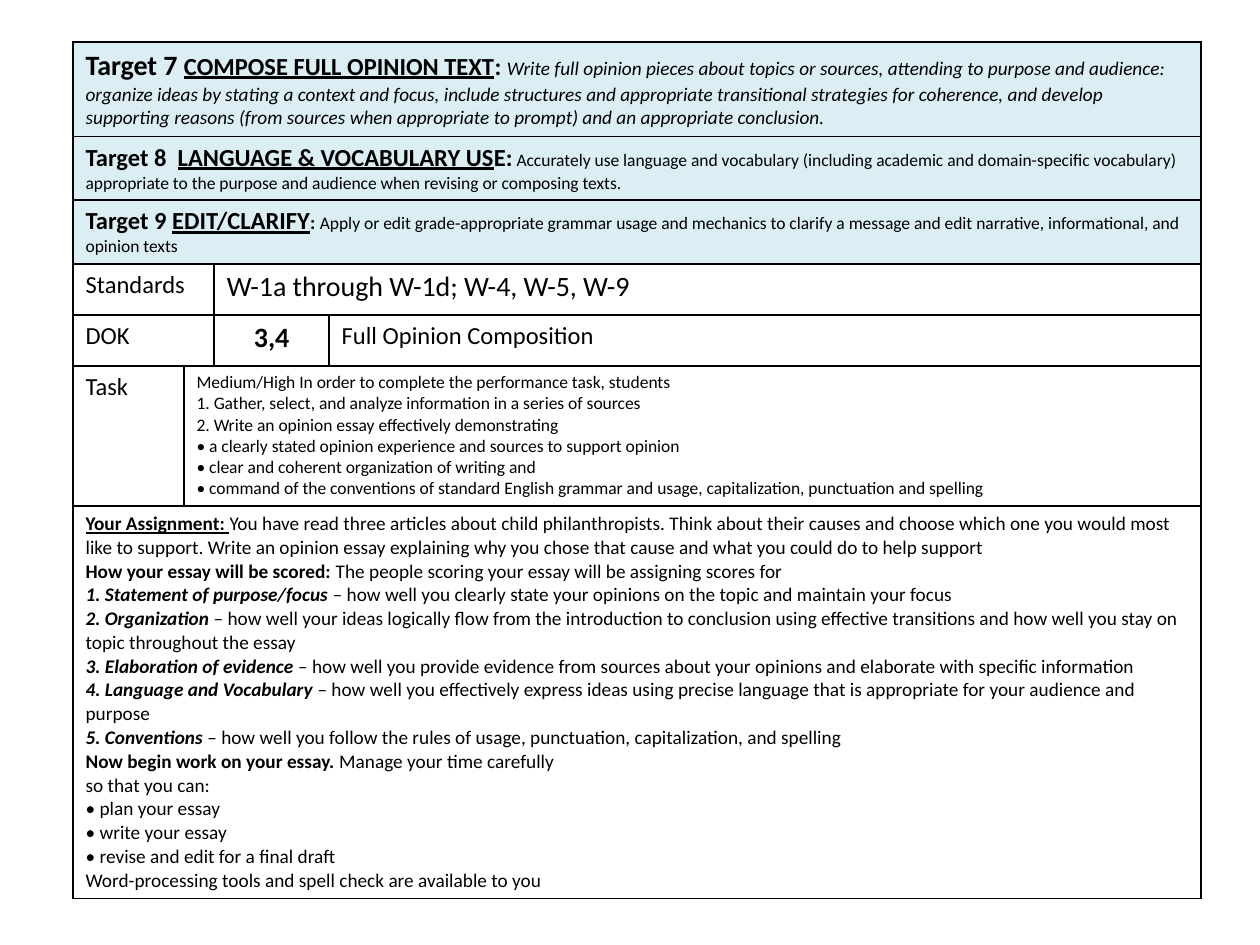
from dataclasses import dataclass

from lxml import etree
from pptx import Presentation
from pptx.dml.color import RGBColor
from pptx.enum.text import PP_ALIGN
from pptx.oxml.ns import qn
from pptx.util import Pt

EMU_PER_PX = 914400 / 126
CENTER = PP_ALIGN.CENTER
BLANK_LAYOUT = 6


@dataclass(frozen=True)
class Theme:
    font: str = "Calibri"
    ink: str = "000000"
    target_fill: str = "DBEEF4"
    border: float = 1
    large: int = 16
    heading: int = 14
    body: int = 11
    small: int = 10


THEME = Theme()


def px(length):
    return round(length * EMU_PER_PX)


def add_text(paragraph, text, size=THEME.body, bold=False, italic=False, underline=False):
    run = paragraph.add_run()
    run.text = text
    font = run.font
    font.name, font.size = THEME.font, Pt(size)
    font.bold, font.italic, font.underline = bold, italic, underline
    font.color.rgb = RGBColor.from_string(THEME.ink)


def styled(text, size=THEME.body, **style):
    """Pair a piece of text with its format."""
    return text, {"size": size, **style}


def plain_lines(lines, size=THEME.body):
    return [[styled(line, size)] for line in lines]


class SlideBuilder:
    def __init__(self, slide, theme):
        self.slide = slide
        self.theme = theme

    def add_table(self, left, top, width, height, columns, row_count, row_height):
        frame = self.slide.shapes.add_table(
            row_count, len(columns), px(left), px(top), px(width), px(height))
        table = frame.table
        table.first_row = table.horz_banding = False
        for column, column_width in zip(table.columns, columns):
            column.width = px(column_width)
        for row in table.rows:
            row.height = px(row_height)
        frame.height = px(height)
        for cell in table.iter_cells():
            self.add_borders(cell)
            cell.fill.background()
        return table

    def add_borders(self, cell):
        properties = cell._tc.get_or_add_tcPr()
        for side in ("a:lnL", "a:lnR", "a:lnT", "a:lnB"):
            line = etree.SubElement(properties, qn(side), w=str(Pt(self.theme.border)))
            fill = etree.SubElement(line, qn("a:solidFill"))
            etree.SubElement(fill, qn("a:srgbClr"), val=self.theme.ink)

    def fill_cell(self, table, row, first, last, paragraphs, fill=None, align=None):
        """Merge the columns first to last of a row and write the paragraphs there."""
        cell = table.cell(row, first)
        if last > first:
            cell.merge(table.cell(row, last))
        if fill:
            for column in range(first, last + 1):
                part = table.cell(row, column)
                part.fill.solid()
                part.fill.fore_color.rgb = RGBColor.from_string(fill)
        frame = cell.text_frame
        for index, pieces in enumerate(paragraphs):
            paragraph = frame.add_paragraph() if index else frame.paragraphs[0]
            paragraph.alignment = align
            for text, style in pieces:
                add_text(paragraph, text, **style)


TARGETS = [
    [styled("Target 7 ", THEME.large, bold=True),
     styled("COMPOSE FULL OPINION TEXT", THEME.heading, bold=True, underline=True),
     styled(": ", THEME.heading, bold=True),
     styled("Write full opinion pieces about topics or sources, attending to purpose and "
            "audience: organize ideas by stating a context and focus, include structures and "
            "appropriate transitional strategies for coherence, and develop supporting reasons "
            "(from sources when appropriate to prompt) and an appropriate conclusion.",
            italic=True)],
    [styled("Target 8  ", THEME.heading, bold=True),
     styled("LANGUAGE & VOCABULARY US", THEME.heading, bold=True, underline=True),
     styled("E:", THEME.heading, bold=True),
     styled(" ", THEME.small, bold=True),
     styled("Accurately use language and vocabulary (including academic and domain-specific "
            "vocabulary) appropriate to the purpose and audience when revising or composing "
            "texts.", THEME.small)],
    [styled("Target 9 ", THEME.heading, bold=True),
     styled("EDIT/CLARIFY", THEME.heading, bold=True, underline=True),
     styled(": ", bold=True),
     styled("Apply or edit grade-appropriate grammar usage and mechanics to clarify a message "
            "and edit narrative, informational, and opinion texts", THEME.small)],
]

TASK_LINES = [
    "Medium/High In order to complete the performance task, students",
    "1. Gather, select, and analyze information in a series of sources",
    "2. Write an opinion essay effectively demonstrating",
    "• a clearly stated opinion experience and sources to support opinion",
    "• clear and coherent organization of writing and",
    "• command of the conventions of standard English grammar and usage, capitalization, "
    "punctuation and spelling",
]

CRITERIA = [
    ("2. Organization ", "how your ideas logically flow from the introduction to conclusion "
     "using effective transitions and how well you stay on topic throughout the essay"),
    ("3. Elaboration of evidence ", "you provide evidence from sources about your opinions "
     "and elaborate with specific information"),
    ("4. Language and Vocabulary ", "you effectively express ideas using precise language "
     "that is appropriate for your audience and purpose"),
    ("5. Conventions ", "you follow the rules of usage, punctuation, capitalization, and "
     "spelling"),
]
CRITERIA[0] = (CRITERIA[0][0], CRITERIA[0][1].removeprefix("how "))

ASSIGNMENT = [
    [styled("Your Assignment: ", bold=True, underline=True),
     styled("You have read three articles about child philanthropists. Think about their causes "
            "and choose which one you would most like to support. Write an opinion essay "
            "explaining why you chose that cause and what you could do to help support")],
    [styled("How your essay will be scored: ", bold=True),
     styled("The people scoring your essay will be assigning scores for")],
    [styled("1. Statement of purpose/focus ", bold=True, italic=True),
     styled("– ", italic=True),
     styled("how well you clearly state your opinions on the topic and maintain your focus")],
    *[[styled(name, bold=True, italic=True), styled(f"– how well {meaning}")]
      for name, meaning in CRITERIA],
    [styled("Now begin work on your essay. ", bold=True), styled("Manage your time carefully")],
    *plain_lines(["so that you can:", "• plan your essay", "• write your essay",
                  "• revise and edit for a final draft",
                  "Word-processing tools and spell check are available to you"]),
]


def main():
    presentation = Presentation()
    presentation.slide_width, presentation.slide_height = px(1260), px(945)
    slide = presentation.slides.add_slide(presentation.slide_layouts[BLANK_LAYOUT])
    builder = SlideBuilder(slide, THEME)
    table = builder.add_table(73, 42, 1113, 842, columns=(111, 16, 115, 872),
                              row_count=7, row_height=51)

    for row, target in enumerate(TARGETS):
        builder.fill_cell(table, row, 0, 3, [target], fill=THEME.target_fill)
    for row, (label, last) in enumerate([("Standards", 1), ("DOK", 1), ("Task", 0)], start=3):
        builder.fill_cell(table, row, 0, last, [[styled(label, THEME.heading)]])
    builder.fill_cell(table, 3, 2, 3,
                      [[styled("W-1a through W-1d; W-4, W-5, W-9", THEME.large)]])
    builder.fill_cell(table, 4, 2, 2, [[styled("3,4", THEME.large, bold=True)]], align=CENTER)
    builder.fill_cell(table, 4, 3, 3, [[styled("Full Opinion Composition", THEME.heading)]])
    builder.fill_cell(table, 5, 1, 3, plain_lines(TASK_LINES, THEME.small))
    builder.fill_cell(table, 6, 0, 3, ASSIGNMENT)
    presentation.save("out.pptx")


if __name__ == "__main__":
    main()
